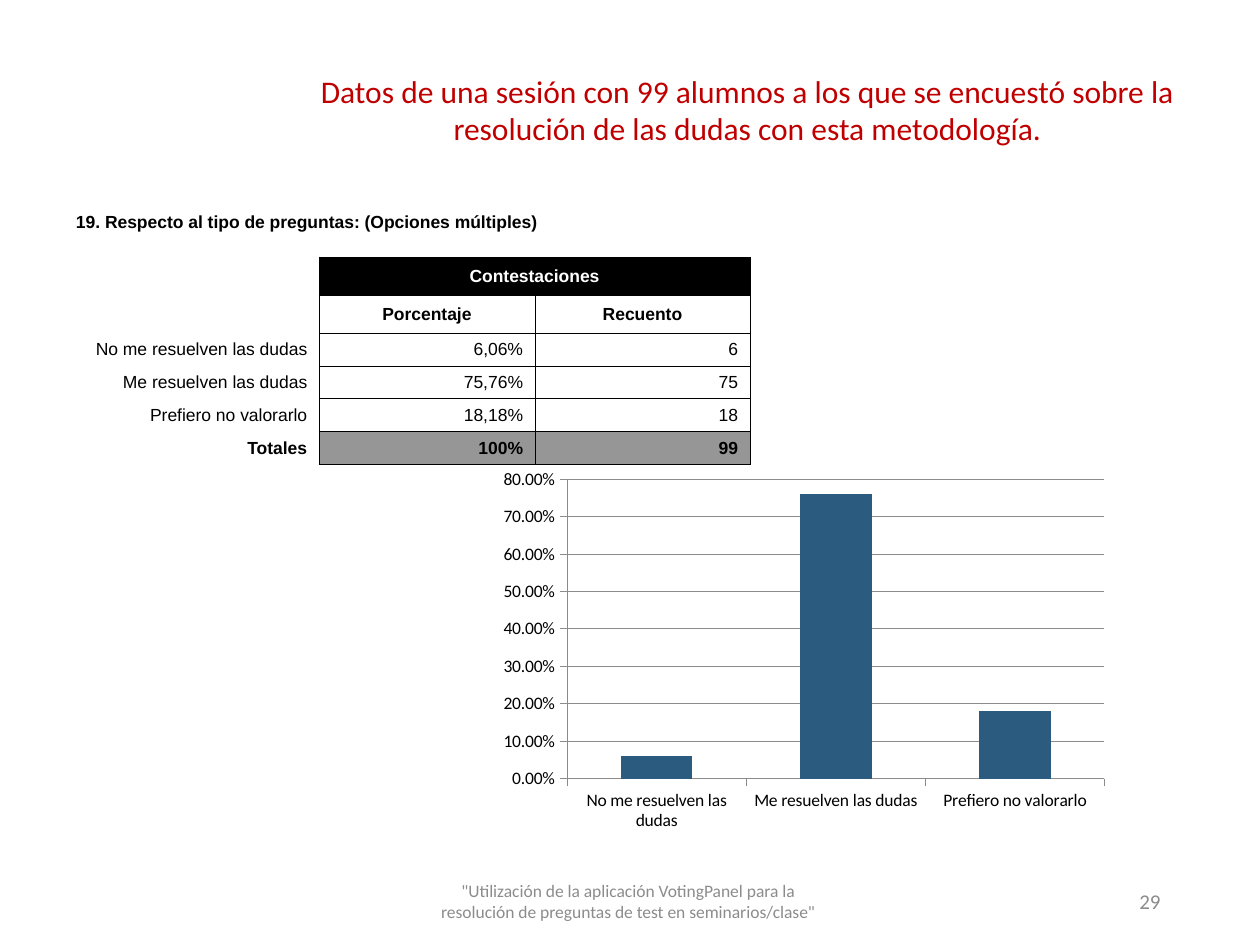
from lxml import etree
from pptx import Presentation
from pptx.chart.data import CategoryChartData
from pptx.dml.color import RGBColor
from pptx.enum.chart import XL_CHART_TYPE, XL_TICK_MARK
from pptx.enum.text import MSO_ANCHOR, MSO_AUTO_SIZE, PP_ALIGN
from pptx.oxml.ns import qn
from pptx.util import Pt

PX = 914400 // 126
LEFT, CENTER, RIGHT = PP_ALIGN.LEFT, PP_ALIGN.CENTER, PP_ALIGN.RIGHT
MIDDLE, BOTTOM = MSO_ANCHOR.MIDDLE, MSO_ANCHOR.BOTTOM
NO_FIT = MSO_AUTO_SIZE.NONE
COLUMN = XL_CHART_TYPE.COLUMN_CLUSTERED
OUTSIDE = XL_TICK_MARK.OUTSIDE

COLORS = {
    "title": "C00000",
    "foot": "8C8C8C",
    "ink": "000000",
    "paper": "FFFFFF",
    "total": "969696",
    "bar": "2B5B7F",
    "axis": "8B8B8B",
}
TITLE = ("Datos de una sesión con 99 alumnos a los que se encuestó sobre la "
         "resolución de las dudas con esta metodología.")
FOOT = ('"Utilización de la aplicación VotingPanel para la '
        'resolución de preguntas de test en seminarios/clase"')
QUERY = "19. Respecto al tipo de preguntas: (Opciones múltiples)"
ANSWERS = [
    ("No me resuelven las dudas", "6,06%", "6"),
    ("Me resuelven las dudas", "75,76%", "75"),
    ("Prefiero no valorarlo", "18,18%", "18"),
]
SHARES = [0.06, 0.76, 0.18]
COLS = [255, 201, 15, 215]
ROWS = [47, 25, 38, 38] + [33] * 4


def scale(*box):
    return [n * PX for n in box]


def paint(color):
    return RGBColor.from_string(COLORS[color])


def style(font, color, size, name="Calibri", bold=False):
    form = {"name": name, "size": Pt(size), "bold": bold}
    for key, value in form.items():
        setattr(font, key, value)
    font.color.rgb = paint(color)


def write(shape, text, align, color, size):
    frame = shape.text_frame
    form = {"word_wrap": True, "auto_size": NO_FIT, "vertical_anchor": MIDDLE}
    for key, value in form.items():
        setattr(frame, key, value)
    para = frame.paragraphs[0]
    para.alignment = align
    run = para.add_run()
    run.text = text
    style(run.font, color, size)


def add_title(slide, box):
    title = slide.shapes.title
    for key, value in zip(("left", "top", "width", "height"), scale(*box)):
        setattr(title, key, value)
    write(title, TITLE, CENTER, "title", 18)


def add_note(slide, box, text, align, size):
    write(slide.shapes.add_textbox(*scale(*box)), text, align, "foot", size)


def edge(cell, sides):
    """Draw the named sides (of L, R, T, B) and hide the others."""
    props = cell._tc.get_or_add_tcPr()
    for side in "LRTB":
        line = etree.SubElement(props, qn("a:ln" + side), w=str(Pt(0.5)))
        if side in sides:
            fill = etree.SubElement(line, qn("a:solidFill"))
            etree.SubElement(fill, qn("a:srgbClr"), val=COLORS["ink"])
        else:
            etree.SubElement(line, qn("a:noFill"))


def shrink(cell):
    """Keep an empty cell from stretching its row."""
    para = cell.text_frame.paragraphs[0]._p
    etree.SubElement(para, qn("a:endParaRPr"), sz="100")


def prep(table):
    """Set borders and blank formats on the whole grid."""
    for r in range(len(ROWS)):
        for c in range(len(COLS)):
            cell = table.cell(r, c)
            if r > 1:
                edge(cell, "LRTB" if c else "R")
            else:
                edge(cell, "B" if r and c else "")
            cell.fill.background()
            for key in ("left", "right", "top", "bottom"):
                setattr(cell, "margin_" + key, 0)


def fill_cell(cell, text, align, bold=False, color="ink", back=None):
    form = {
        "margin_left": 12 * PX if align == LEFT else PX,
        "margin_right": 12 * PX if align == RIGHT else PX,
        "margin_top": PX,
        "vertical_anchor": BOTTOM if align == LEFT else MIDDLE,
    }
    for key, value in form.items():
        setattr(cell, key, value)
    if back:
        cell.fill.solid()
        cell.fill.fore_color.rgb = paint(back)
    para = cell.text_frame.paragraphs[0]
    para.alignment = align
    run = para.add_run()
    run.text = text
    style(run.font, color, 10, "Arial", bold)


def add_grid(slide, left, top):
    box = scale(left, top, sum(COLS), sum(ROWS))
    table = slide.shapes.add_table(len(ROWS), len(COLS), *box).table
    table.first_row = table.horz_banding = False
    for col, width in zip(table.columns, COLS):
        col.width = width * PX
    for row, height in zip(table.rows, ROWS):
        row.height = height * PX
    prep(table)

    table.cell(0, 0).merge(table.cell(0, 3))
    table.cell(2, 1).merge(table.cell(2, 3))
    for r in (1, 3, 4, 5, 6, 7):
        table.cell(r, 1).merge(table.cell(r, 2))

    fill_cell(table.cell(0, 0), QUERY, LEFT, True)
    fill_cell(table.cell(2, 1), "Contestaciones", CENTER, True, "paper", "ink")
    for c, text in ((1, "Porcentaje"), (3, "Recuento")):
        fill_cell(table.cell(3, c), text, CENTER, True, back="paper")
    lines = ANSWERS + [("Totales", "100%", "99")]
    for r, line in enumerate(lines, 4):
        last = r == len(ROWS) - 1
        for c, text in zip((0, 1, 3), line):
            back = "total" if last and c else "paper"
            fill_cell(table.cell(r, c), text, RIGHT, last, back=back)
    for cell in table.iter_cells():
        if not cell.text_frame.text:
            shrink(cell)


def add_bars(slide, box):
    data = CategoryChartData(number_format="0.00%")
    data.categories = [line[0] for line in ANSWERS]
    data.add_series("Porcentaje", SHARES)
    chart = slide.shapes.add_chart(COLUMN, *scale(*box), data).chart
    chart.has_legend = chart.has_title = False
    style(chart.font, "ink", 10)
    plot = chart.plots[0]
    plot.gap_width = 150
    plot.vary_by_categories = False
    fill = plot.series[0].format.fill
    fill.solid()
    fill.fore_color.rgb = paint("bar")

    axis = chart.value_axis
    form = {"minimum_scale": 0, "maximum_scale": 0.8, "major_unit": 0.1,
            "has_major_gridlines": True}
    for key, value in form.items():
        setattr(axis, key, value)
    axis.tick_labels.number_format = "0.00%"
    axis.tick_labels.number_format_is_linked = False
    for part in (axis, chart.category_axis):
        part.major_tick_mark = OUTSIDE
    for part in (axis, chart.category_axis, axis.major_gridlines):
        part.format.line.color.rgb = paint("axis")
        part.format.line.width = Pt(0.5)


def main():
    deck = Presentation()
    deck.slide_width, deck.slide_height = scale(1260, 945)
    slide = deck.slides.add_slide(deck.slide_layouts[5])
    add_title(slide, (256, 65, 983, 89))
    add_note(slide, (415, 876, 426, 50), FOOT, CENTER, 10)
    add_note(slide, (890, 876, 283, 50), "29", RIGHT, 12)
    add_grid(slide, 64, 185)
    add_bars(slide, (491, 462, 626, 376))
    deck.save("out.pptx")


if __name__ == "__main__":
    main()
